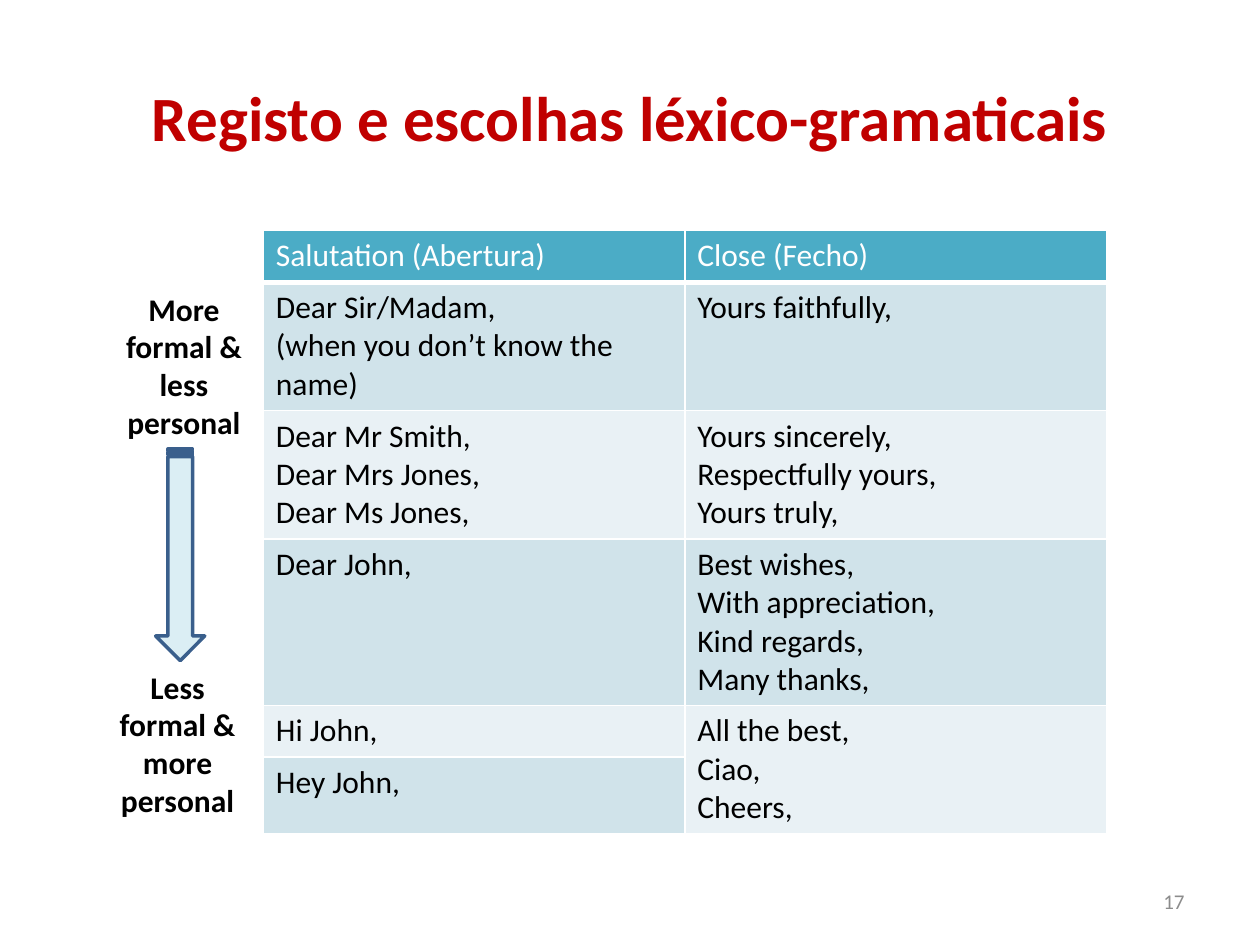
"""Builds a slide on letter openings and closings, from formal to informal."""
from lxml import etree
from pptx import Presentation, util as u
from pptx.dml.color import RGBColor
from pptx.enum import shapes, text
from pptx.oxml.ns import qn

WIDTH, HEIGHT = u.Inches(10), u.Inches(7.5)
FONT = "Calibri"
RED = RGBColor(0xC0, 0x00, 0x00)
BLACK = RGBColor(0x00, 0x00, 0x00)
WHITE = RGBColor(0xFF, 0xFF, 0xFF)
GREY = RGBColor(0x8C, 0x8C, 0x8C)
TEAL = RGBColor(0x4B, 0xAC, 0xC6)
BANDS = RGBColor(0xD0, 0xE3, 0xEA), RGBColor(0xE9, 0xF1, 0xF5)
ARROW_FILL = RGBColor(0xDB, 0xEE, 0xF4)
ARROW_LINE = RGBColor(0x3A, 0x5F, 0x8C)

ROWS = [
    (["Salutation (Abertura)"], ["Close (Fecho)"]),
    (["Dear Sir/Madam,", "(when you don’t know the name)"], ["Yours faithfully,"]),
    (["Dear Mr Smith,", "Dear Mrs Jones,", "Dear Ms Jones,"],
     ["Yours sincerely,", "Respectfully yours,", "Yours truly,"]),
    (["Dear John,"],
     ["Best wishes,", "With appreciation,", "Kind regards,", "Many thanks,"]),
    (["Hi John,"], ["All the best,", "Ciao,", "Cheers,"]),
    (["Hey John,"], []),
]
ROW_HEIGHTS = [0.41, 1.02, 1.02, 1.32, 0.41, 0.61]


def place(left, top, width, height):
    """Turn shares of the slide's size into lengths."""
    return (int(left * WIDTH), int(top * HEIGHT),
            int(width * WIDTH), int(height * HEIGHT))


def write(frame, lines, size, color, bold=False, align=text.PP_ALIGN.LEFT):
    """Write each line as a paragraph with one run."""
    for number, line in enumerate(lines):
        para = frame.add_paragraph() if number else frame.paragraphs[0]
        para.alignment = align
        span = para.add_run()
        span.text = line
        span.font.name, span.font.size = FONT, u.Pt(size)
        span.font.bold, span.font.color.rgb = bold, color


def add_text(page, area, lines, size, color, bold=False,
             align=text.PP_ALIGN.CENTER, anchor=text.MSO_ANCHOR.TOP):
    """Add a wrapping text box."""
    box = page.shapes.add_textbox(*place(*area))
    box.text_frame.word_wrap = True
    box.text_frame.vertical_anchor = anchor
    write(box.text_frame, lines, size, color, bold, align)


def add_borders(cell, bottom):
    """Draw white borders round a cell, with the bottom width in points."""
    properties = cell._tc.get_or_add_tcPr()
    for side, points in (("L", 1), ("R", 1), ("T", 1), ("B", bottom)):
        line = etree.SubElement(properties, qn(f"a:ln{side}"), w=str(u.Pt(points)))
        fill = etree.SubElement(line, qn("a:solidFill"))
        etree.SubElement(fill, qn("a:srgbClr"), val=str(WHITE))


def add_register_table(page):
    """Add the table of openings and closings."""
    area = place(0.209, 0.244, 0.669, 0.64)
    table = page.shapes.add_table(len(ROWS), 2, *area).table
    for row, height in enumerate(ROW_HEIGHTS):
        table.rows[row].height = u.Inches(height)
        for column, lines in enumerate(ROWS[row]):
            cell = table.cell(row, column)
            add_borders(cell, 1 if row else 3)
            cell.fill.solid()
            cell.fill.fore_color.rgb = BANDS[(row - 1) % 2] if row else TEAL
            write(cell.text_frame, lines, 18, BLACK if row else WHITE)
    table.cell(4, 1).merge(table.cell(5, 1))


def add_arrow(page):
    """Add the striped arrow that points down."""
    arrow = page.shapes.add_shape(shapes.MSO_SHAPE.STRIPED_RIGHT_ARROW,
                                  *place(0.059, 0.561, 0.168, 0.052))
    arrow.rotation = 90
    arrow.shadow.inherit = False
    arrow.fill.solid()
    arrow.fill.fore_color.rgb = ARROW_FILL
    arrow.line.color.rgb = ARROW_LINE
    arrow.line.width = u.Pt(2)


def main():
    """Build and save the slide."""
    deck = Presentation()
    deck.slide_width, deck.slide_height = WIDTH, HEIGHT
    page = deck.slides.add_slide(deck.slide_layouts[6])
    middle = text.MSO_ANCHOR.MIDDLE
    add_text(page, (0.05, 0.04, 0.9, 0.167), ["Registo e escolhas léxico-gramaticais"],
             36, RED, bold=True, anchor=middle)
    add_register_table(page)
    add_text(page, (0.717, 0.927, 0.233, 0.053), ["17"], 12, GREY,
             align=text.PP_ALIGN.RIGHT, anchor=middle)
    add_arrow(page)
    add_text(page, (0.071, 0.3, 0.15, 0.175), ["More", "formal &", "less personal"],
             18, BLACK, bold=True)
    add_text(page, (0.066, 0.7, 0.15, 0.175), ["Less", "formal & more personal"],
             18, BLACK, bold=True)
    deck.save("out.pptx")


if __name__ == "__main__":
    main()
